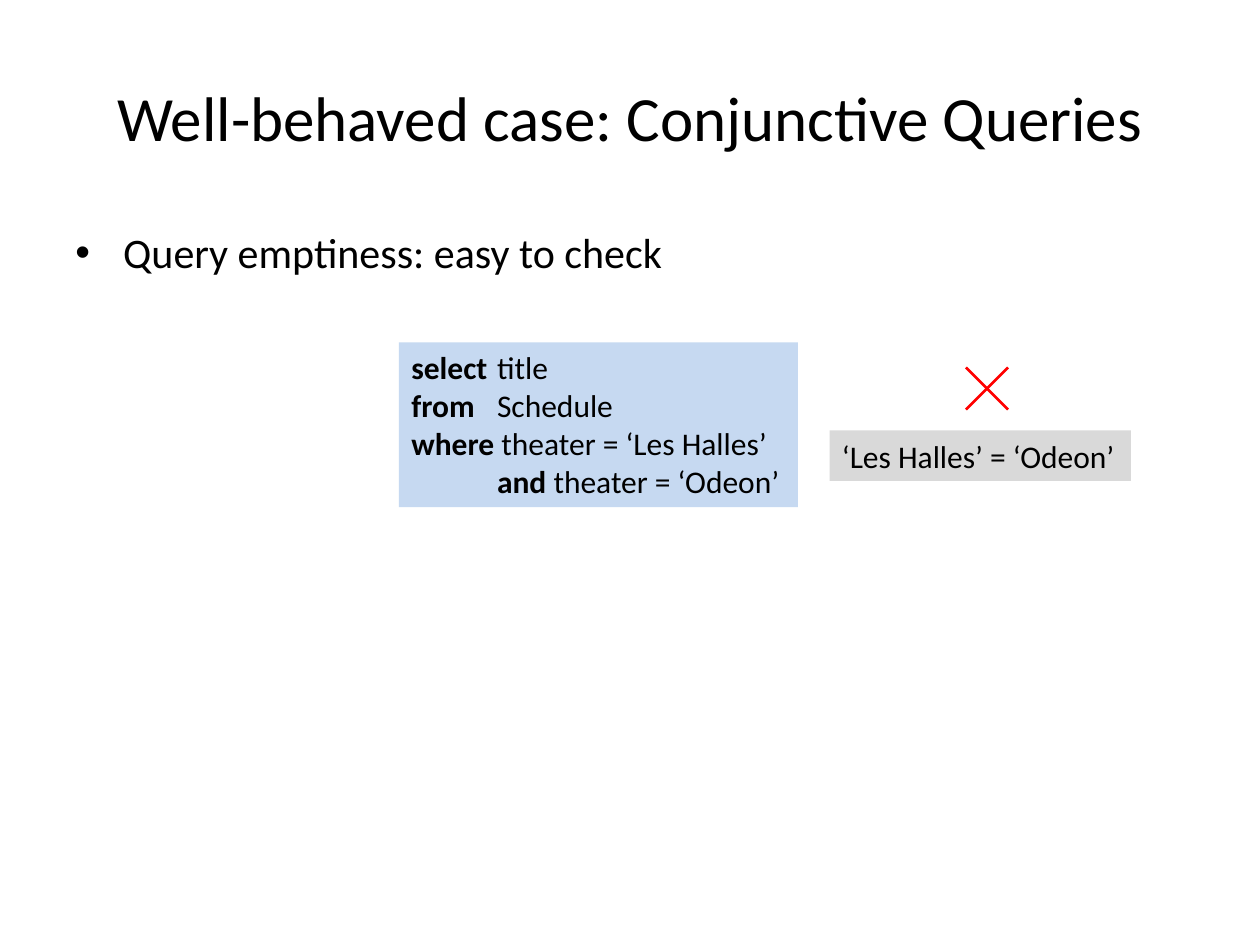
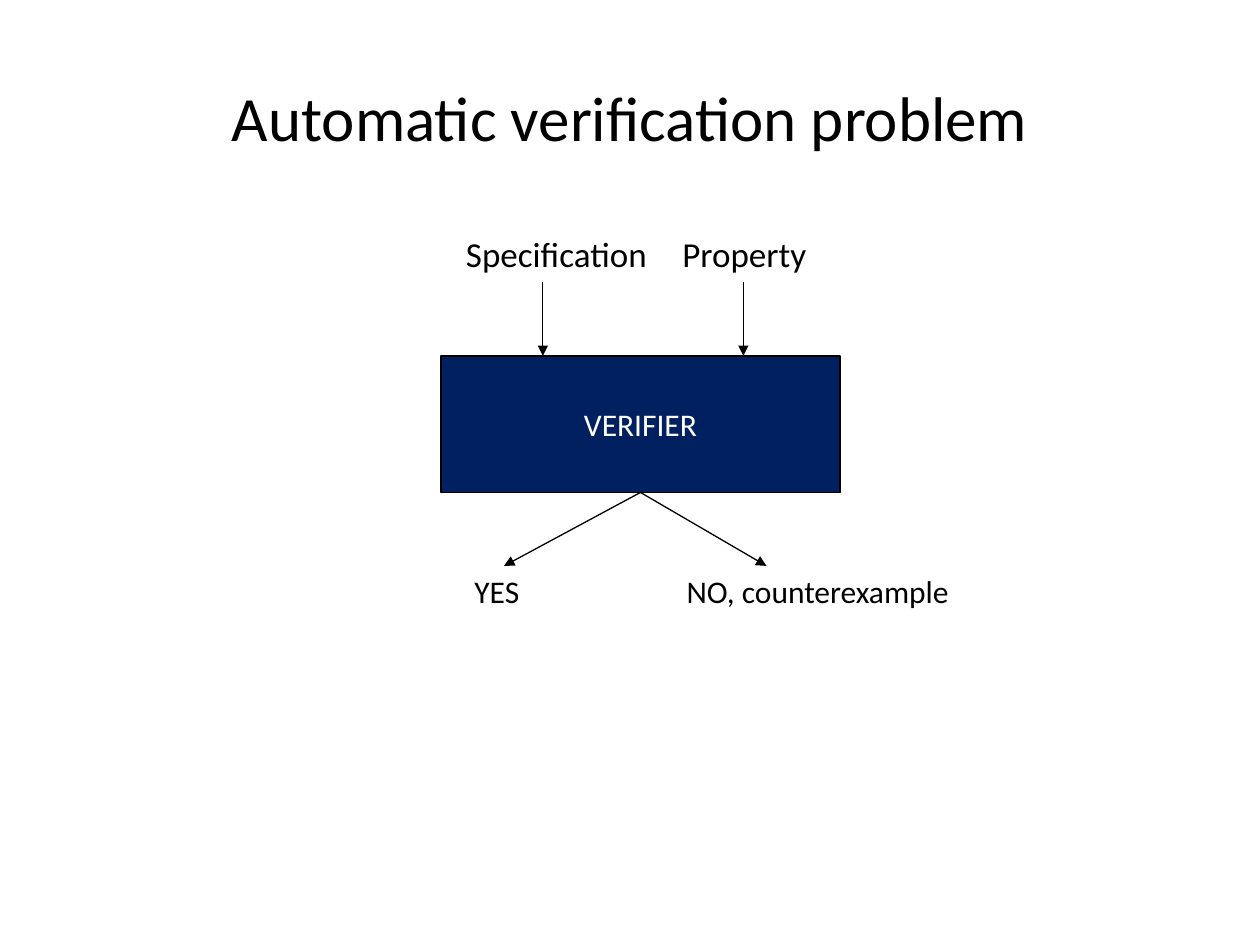
from dataclasses import dataclass

from lxml import etree
from pptx import Presentation
from pptx import util as u
from pptx.dml.color import RGBColor
from pptx.enum import shapes, text
from pptx.oxml.ns import qn


@dataclass(frozen=True)
class Theme:
    """Colours, type sizes and the grid shared by the slides."""
    font: str = "Calibri"
    ink: str = "000000"
    white: str = "FFFFFF"
    query: str = "C6D9F1"
    conflict: str = "D9D9D9"
    verifier: str = "002060"
    cross: str = "FF0000"
    title: int = 36
    body: int = 24
    label: int = 20
    small: int = 18
    thin: float = 0.75
    thick: float = 1.5
    cell: int = u.Inches(1) // 12
    indent: int = u.Inches(0.38)
    keyword_column: int = u.Inches(0.68)


T = Theme()


def grid(*cells):
    """Turn grid columns and rows into slide lengths."""
    return [round(c * T.cell) for c in cells]


def rgb(code):
    """Return the colour for a hex code."""
    return RGBColor.from_string(code)


def add_run(p, words, size, color=T.ink, bold=False):
    """Add one styled run to a paragraph."""
    r = p.add_run()
    r.text = words
    r.font.name, r.font.size, r.font.bold = T.font, u.Pt(size), bold
    r.font.color.rgb = rgb(color)


def add_text(s, box, words, size, wrap=False):
    """Add a text box and return its text frame."""
    tf = s.shapes.add_textbox(*grid(*box)).text_frame
    tf.word_wrap = wrap
    tf.auto_size = text.MSO_AUTO_SIZE.NONE if wrap else text.MSO_AUTO_SIZE.SHAPE_TO_FIT_TEXT
    add_run(tf.paragraphs[0], words, size)
    return tf


def add_box(s, box, fill, line=None):
    """Add a filled rectangle with left-aligned text from the top."""
    sp = s.shapes.add_shape(shapes.MSO_SHAPE.RECTANGLE, *grid(*box))
    sp.shadow.inherit = False
    sp.fill.solid()
    sp.fill.fore_color.rgb = rgb(fill)
    if line:
        sp.line.color.rgb, sp.line.width = rgb(line), u.Pt(T.thin)
    else:
        sp.line.fill.background()
    tf = sp.text_frame
    tf.word_wrap = False
    tf.vertical_anchor = text.MSO_ANCHOR.TOP
    tf.paragraphs[0].alignment = text.PP_ALIGN.LEFT
    return sp


def add_line(s, start, end, color=T.ink, width=T.thin, arrow=False):
    """Add a straight line, with an arrowhead at its end if asked."""
    line = s.shapes.add_connector(shapes.MSO_CONNECTOR.STRAIGHT, *grid(*start, *end))
    line.line.color.rgb, line.line.width = rgb(color), u.Pt(width)
    if arrow:
        etree.SubElement(line.line._get_or_add_ln(), qn("a:tailEnd"), type="triangle")
    etree.SubElement(line._element.spPr, qn("a:effectLst"))
    return line


def add_slide(prs, title):
    """Add a blank slide with a centred title."""
    s = prs.slides.add_slide(prs.slide_layouts[6])
    tf = add_text(s, (6, 3.6, 108, 15), title, T.title, wrap=True)
    tf.vertical_anchor = text.MSO_ANCHOR.MIDDLE
    tf.paragraphs[0].alignment = text.PP_ALIGN.CENTER
    return s


def add_bullet(s, box, words):
    """Add a bulleted line of body text."""
    p = add_text(s, box, words, T.body, wrap=True).paragraphs[0]
    p.space_before = u.Pt(T.body * 0.2)
    pPr = p._p.get_or_add_pPr()
    pPr.set("marL", str(T.indent))
    pPr.set("indent", str(-T.indent))
    etree.SubElement(pPr, qn("a:buFont"), typeface="Arial")
    etree.SubElement(pPr, qn("a:buChar"), char="•")


def add_query(s, box, clauses):
    """Add a query whose clauses line up on the keyword column."""
    tf = add_box(s, box, T.query).text_frame
    tf.auto_size = text.MSO_AUTO_SIZE.SHAPE_TO_FIT_TEXT
    for i, (keyword, rest) in enumerate(clauses):
        p = tf.add_paragraph() if i else tf.paragraphs[0]
        p.alignment = text.PP_ALIGN.LEFT
        pPr = p._p.get_or_add_pPr()
        if keyword == "and":
            pPr.set("marL", str(T.keyword_column))
            pPr.set("indent", "0")
        elif rest.startswith("\t"):
            tabs = etree.SubElement(pPr, qn("a:tabLst"))
            etree.SubElement(tabs, qn("a:tab"), pos=str(T.keyword_column), algn="l")
        add_run(p, keyword, T.small, bold=True)
        add_run(p, rest, T.small)


def add_cross(s, left, top, size):
    """Add a cross made of two diagonals."""
    right, bottom = left + size, top + size
    for start, end in (((left, top), (right, bottom)), ((right, top), (left, bottom))):
        add_line(s, start, end, T.cross, T.thick)


def conjunctive_queries(prs):
    """Build the slide on checking query emptiness."""
    s = add_slide(prs, "Well-behaved case: Conjunctive Queries")
    add_bullet(s, (6, 21, 108, 59.4), "Query emptiness: easy to check")
    add_query(s, (38, 32.6, 38, 15.7), (
        ("select", "\ttitle"),
        ("from", "\tSchedule"),
        ("where", " theater = ‘Les Halles’"),
        ("and", " theater = ‘Odeon’"),
    ))
    tf = add_box(s, (79, 41, 28.7, 4.8), T.conflict).text_frame
    tf.auto_size = text.MSO_AUTO_SIZE.SHAPE_TO_FIT_TEXT
    add_run(tf.paragraphs[0], "‘Les Halles’ = ‘Odeon’", T.small)
    add_cross(s, 92, 35, 4)


def verification_problem(prs):
    """Build the slide with the verifier, its inputs and its answers."""
    s = add_slide(prs, "Automatic verification problem")
    left, top, width, height = 42, 33.9, 38, 13
    verifier = add_box(s, (left, top, width, height), T.verifier, T.ink)
    tf = verifier.text_frame
    tf.vertical_anchor = text.MSO_ANCHOR.MIDDLE
    tf.paragraphs[0].alignment = text.PP_ALIGN.CENTER
    add_run(tf.paragraphs[0], "VERIFIER", T.small, T.white)

    for words, x, w, arrow_x in (("Specification", 43.2, 19.9, 51.7),
                                 ("Property", 63.8, 14.3, 70.8)):
        add_text(s, (x, 21.6, w, 5.3), words, T.label)
        add_line(s, (arrow_x, 26.9), (arrow_x, top), arrow=True)

    answer_top = top + height + 7
    for words, x, w, arrow_x in (("YES", 44, 8.2, 48),
                                 ("NO, counterexample", 64.2, 36.1, 73)):
        add_text(s, (x, answer_top, w, 6), words, T.small)
        arrow = add_line(s, (left + width / 2, top + height), (arrow_x, answer_top), arrow=True)
        arrow.begin_connect(verifier, 2)


def main():
    """Build and save the presentation."""
    prs = Presentation()
    prs.slide_width, prs.slide_height = grid(120, 90)
    conjunctive_queries(prs)
    verification_problem(prs)
    prs.save("out.pptx")


if __name__ == "__main__":
    main()
